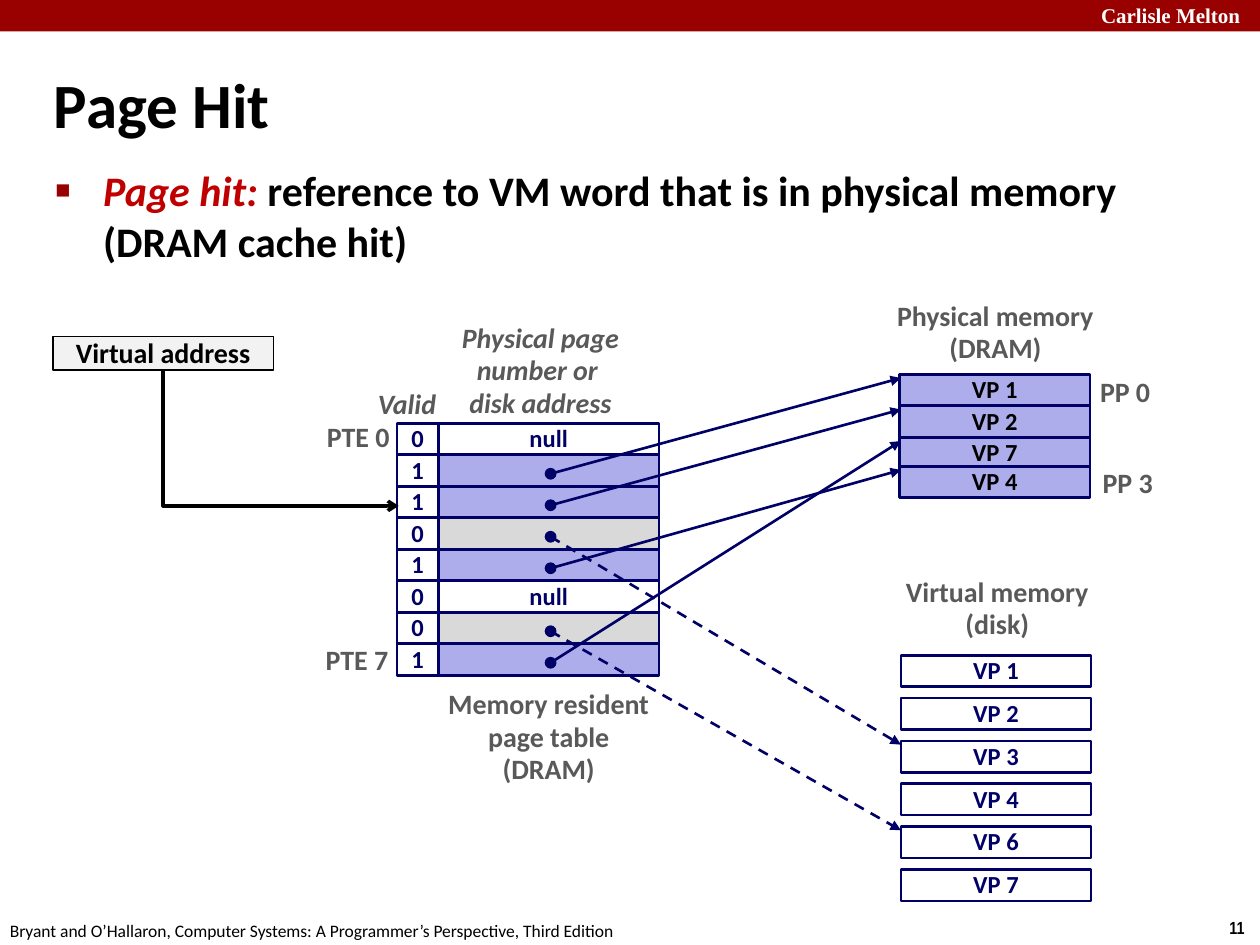
"""Build the "Page Hit" slide: a page table mapping to physical memory and disk."""
from lxml.etree import SubElement
from pptx import Presentation
from pptx.dml.color import RGBColor
from pptx.enum.dml import MSO_LINE
from pptx.enum.shapes import MSO_CONNECTOR, MSO_SHAPE
from pptx.enum.text import MSO_ANCHOR, MSO_AUTO_SIZE, PP_ALIGN
from pptx.oxml.ns import qn
from pptx.util import Inches, Pt

COLORS = {
    "bar": "990000", "term": "C00000", "navy": "000066", "resident": "ADADEB",
    "on_disk": "D9D9D9", "label": "595959", "address": "F2F2F2",
    "black": "000000", "white": "FFFFFF",
}
LEFT, CENTER, RIGHT = PP_ALIGN.LEFT, PP_ALIGN.CENTER, PP_ALIGN.RIGHT
TOP, MIDDLE = MSO_ANCHOR.TOP, MSO_ANCHOR.MIDDLE

PAGE_TABLE = [
    ("0", None), ("1", "VP 1"), ("1", "VP 2"), ("0", "VP 3"),
    ("1", "VP 4"), ("0", None), ("0", "VP 6"), ("1", "VP 7"),
]
PHYSICAL_TOPS = {"VP 1": 2.97, "VP 2": 3.22, "VP 7": 3.47, "VP 4": 3.7}
DISK_PAGES = ["VP 1", "VP 2", "VP 3", "VP 4", "VP 6", "VP 7"]
LABELS = [
    (["Memory resident", "page table", "(DRAM)"], (3.43, 5.41, 1.85, 0.89), CENTER, TOP, False),
    (["Physical memory", "(DRAM)"], (7.01, 2.33, 1.78, 0.63), CENTER, TOP, False),
    (["Virtual memory", "(disk)"], (7.07, 4.52, 1.69, 0.63), CENTER, TOP, False),
    (["Valid"], (2.9, 3.03, 0.75, 0.37), LEFT, TOP, True),
    (["Physical page", "number or ", "disk address"], (3.56, 2.5, 1.46, 0.89), CENTER, MIDDLE, True),
    (["PTE 0"], (2.49, 3.29, 0.7, 0.37), RIGHT, MIDDLE, False),
    (["PTE 7"], (2.48, 5.06, 0.7, 0.37), RIGHT, MIDDLE, False),
    (["PP 0"], (8.63, 2.93, 0.6, 0.37), CENTER, MIDDLE, False),
    (["PP 3"], (8.65, 3.65, 0.6, 0.37), CENTER, MIDDLE, False),
]
FOOTERS = [
    ("Carlisle Melton", (8.64, -0.03, 1.43, 0.3), 12, "Times New Roman", "white", True),
    ("11", (9.66, 7.23, 0.34, 0.27), 10, "Arial Narrow", "black", True),
    ("Bryant and O’Hallaron, Computer Systems: A Programmer’s Perspective, Third Edition",
     (-0.02, 7.25, 5.08, 0.27), 10, "Calibri", "black", False),
]
TITLE = "Page Hit"
BODY = [("Page hit: ", "term", True),
        ("reference to VM word that is in physical memory (DRAM cache hit)", "black", False)]

ROW_H, TABLE_TOP = 0.25, 3.36
VALID_X, VALID_W = 3.15, 0.33
ENTRY_X, ENTRY_W = 3.48, 1.75
DOT_X, DOT_SIZE = 4.33, 0.08
MEMORY_X, MEMORY_W = 7.14, 1.51
DISK_X, DISK_TOP, DISK_PITCH = 7.15, 5.2, 0.34


def rgb(name):
    return RGBColor.from_string(COLORS[name])


def add_run(p, text, size, color, bold=True, italic=False, font="Calibri"):
    r = p.add_run()
    r.text = text
    r.font.size, r.font.name = Pt(size), font
    r.font.bold, r.font.italic = bold, italic
    r.font.color.rgb = rgb(color)


def add_text(s, box, anchor=TOP, wrap=False):
    tf = s.shapes.add_textbox(*map(Inches, box)).text_frame
    tf.word_wrap, tf.vertical_anchor = wrap, anchor
    if not wrap:
        tf.auto_size = MSO_AUTO_SIZE.SHAPE_TO_FIT_TEXT
    return tf


def add_box(s, box, fill=None, line="navy", width=1.5, text="", color="navy",
            size=14, kind=MSO_SHAPE.RECTANGLE):
    sp = s.shapes.add_shape(kind, *map(Inches, box))
    sp.shadow.inherit = False
    if fill:
        sp.fill.solid()
        sp.fill.fore_color.rgb = rgb(fill)
    else:
        sp.fill.background()
    if line:
        sp.line.color.rgb = rgb(line)
        sp.line.width = Pt(width)
    else:
        sp.line.fill.background()
    if text:
        tf = sp.text_frame
        tf.word_wrap, tf.vertical_anchor = False, MIDDLE
        p = tf.paragraphs[0]
        p.alignment, p.line_spacing = CENTER, 0.98
        add_run(p, text, size, color)


def add_arrow(s, start, end, kind=MSO_CONNECTOR.STRAIGHT, color="navy", width=1.5,
              head="triangle", dashed=False):
    cx = s.shapes.add_connector(kind, *map(Inches, start + end))
    cx.line.color.rgb = rgb(color)
    cx.line.width = Pt(width)
    if dashed:
        cx.line.dash_style = MSO_LINE.DASH
    pr = cx.element.find(qn("p:spPr"))
    SubElement(pr.find(qn("a:ln")), qn("a:tailEnd"), type=head)
    SubElement(pr, qn("a:effectLst"))
    return pr


def add_heading(s):
    p = add_text(s, (0.33, 0.39, 9.06, 0.86), MIDDLE, True).paragraphs[0]
    add_run(p, TITLE, 36, "black")
    p = add_text(s, (0.34, 1.26, 9.09, 0.66), TOP, True).paragraphs[0]
    p.space_before = Pt(4.8)
    pr = p._p.get_or_add_pPr()
    pr.set("marL", str(Inches(0.38)))
    pr.set("indent", str(-Inches(0.38)))
    SubElement(SubElement(pr, qn("a:buClr")), qn("a:srgbClr"), val=COLORS["bar"])
    SubElement(pr, qn("a:buSzPct"), val="60000")
    SubElement(pr, qn("a:buFont"), typeface="Times New Roman")
    SubElement(pr, qn("a:buChar"), char="■")
    for text, color, italic in BODY:
        add_run(p, text, 24, color, italic=italic)


def add_page_table(s, disk_tops):
    for i, (valid, page) in enumerate(PAGE_TABLE):
        top = TABLE_TOP + i * ROW_H
        fill = "white" if page is None else "resident" if valid == "1" else "on_disk"
        add_box(s, (ENTRY_X, top, ENTRY_W, ROW_H), fill, text="" if page else "null")
        add_box(s, (VALID_X, top, VALID_W, ROW_H), text=valid)
    for i, (valid, page) in enumerate(PAGE_TABLE):
        if page:
            y = TABLE_TOP + i * ROW_H + 0.11
            add_box(s, (DOT_X, y, DOT_SIZE, DOT_SIZE), "navy", width=1, kind=MSO_SHAPE.OVAL)
            target = PHYSICAL_TOPS[page] if valid == "1" else disk_tops[page]
            add_arrow(s, (DOT_X + DOT_SIZE / 2, y + DOT_SIZE / 2), (DISK_X, target + 0.03),
                      dashed=valid == "0")


def add_address(s):
    add_box(s, (0.42, 2.67, 1.75, 0.27), "address", "black", 1, "Virtual address", "black", 16)
    pr = add_arrow(s, (2.77, 2.54), (1.69, 4.41), MSO_CONNECTOR.ELBOW, "black", 2, "arrow")
    pr.find(qn("a:xfrm")).set("rot", "16200000")
    pr.find(qn("a:prstGeom")).set("prst", "bentConnector2")


def main():
    prs = Presentation()
    prs.slide_width, prs.slide_height = Inches(10), Inches(7.5)
    s = prs.slides.add_slide(prs.slide_layouts[6])
    add_box(s, (0, 0, 10, 0.25), "bar", None)
    for text, box, size, font, color, bold in FOOTERS:
        add_run(add_text(s, box).paragraphs[0], text, size, color, bold, font=font)
    add_heading(s)
    for page, top in PHYSICAL_TOPS.items():
        add_box(s, (MEMORY_X, top, MEMORY_W, ROW_H), "resident", text=page, color="black")
    disk_tops = {page: DISK_TOP + i * DISK_PITCH for i, page in enumerate(DISK_PAGES)}
    for page, top in disk_tops.items():
        add_box(s, (DISK_X, top, MEMORY_W, ROW_H), "white", text=page)
    add_page_table(s, disk_tops)
    for lines, box, align, anchor, italic in LABELS:
        tf = add_text(s, box, anchor)
        for i, line in enumerate(lines):
            p = tf.add_paragraph() if i else tf.paragraphs[0]
            p.alignment, p.line_spacing = align, 0.98
            add_run(p, line, 16, "label", italic=italic)
    add_address(s)
    prs.save("out.pptx")


if __name__ == "__main__":
    main()
